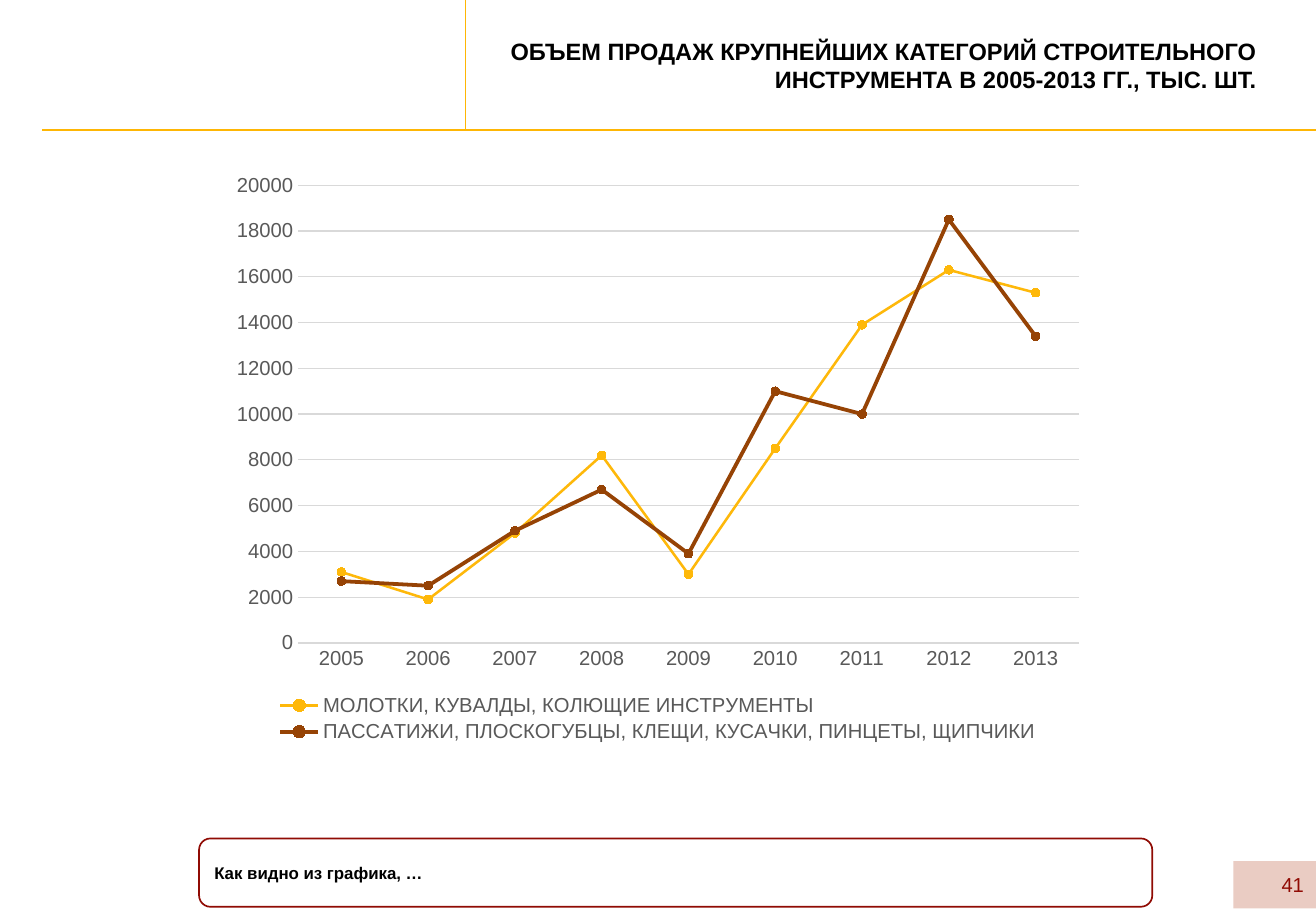
from pptx import Presentation
from pptx.chart.data import CategoryChartData as Data
from pptx.dml.color import RGBColor
from pptx.enum.chart import XL_CHART_TYPE as Kind, XL_LEGEND_POSITION as Place
from pptx.enum.chart import XL_MARKER_STYLE as Mark, XL_TICK_MARK as Tick
from pptx.enum.shapes import MSO_CONNECTOR as Conn, MSO_SHAPE as Form
from pptx.enum.text import MSO_ANCHOR as Anchor, PP_ALIGN as Align
from pptx.oxml.ns import qn
from pptx.util import Pt
from lxml.etree import SubElement

FONT = "Arial"
BLACK = RGBColor(0x00, 0x00, 0x00)
GOLD = RGBColor(0xFE, 0xB6, 0x04)
AMBER = RGBColor(0xFE, 0xB8, 0x0A)
BROWN = RGBColor(0x96, 0x43, 0x05)
RED = RGBColor(0x90, 0x0B, 0x04)
PINK = RGBColor(0xEA, 0xCC, 0xC3)
GREY = RGBColor(0x59, 0x59, 0x59)
PALE = RGBColor(0xD9, 0xD9, 0xD9)

WIDE, HIGH = 780, 540
YEARS = [str(year) for year in range(2005, 2014)]
# Name, values, colour, line width
SALES = [
    ("МОЛОТКИ, КУВАЛДЫ, КОЛЮЩИЕ ИНСТРУМЕНТЫ",
     [3100, 1900, 4800, 8200, 3000, 8500, 13900, 16300, 15300], AMBER, 1.5),
    ("ПАССАТИЖИ, ПЛОСКОГУБЦЫ, КЛЕЩИ, КУСАЧКИ, ПИНЦЕТЫ, ЩИПЧИКИ",
     [2700, 2500, 4900, 6700, 3900, 11000, 10000, 18500, 13400], BROWN, 2.25),
]


def style(font, size, color, bold=False):
    font.name, font.size, font.bold = FONT, Pt(size), bold
    font.color.rgb = color


def write(shape, text, size, color, align, bold=False):
    frame = shape.text_frame
    frame.word_wrap = True
    frame.vertical_anchor = Anchor.MIDDLE
    para = frame.paragraphs[0]
    para.alignment = align
    run = para.add_run()
    run.text = text
    style(run.font, size, color, bold)


def rule(slide, x1, y1, x2, y2, width):
    line = slide.shapes.add_connector(
        Conn.STRAIGHT, Pt(x1), Pt(y1), Pt(x2), Pt(y2))
    line.line.color.rgb = GOLD
    line.line.width = Pt(width)
    SubElement(line._element.spPr, qn("a:effectLst"))


# Title with its gold rules
def header(slide, x, y, w, h):
    split = x + 251
    rule(slide, x, y + h, x + w, y + h, 1)
    rule(slide, split, y + h, split, y, 0.75)
    box = slide.shapes.add_textbox(Pt(split), Pt(y), Pt(476), Pt(h))
    write(box, "ОБЪЕМ ПРОДАЖ КРУПНЕЙШИХ КАТЕГОРИЙ СТРОИТЕЛЬНОГО "
          "ИНСТРУМЕНТА В 2005-2013 ГГ., ТЫС. ШТ.", 14, BLACK, Align.RIGHT, True)


# Line chart of sales
def graph(slide, x, y, w, h):
    data = Data(number_format="0")
    data.categories = YEARS
    for name, vals, _, _ in SALES:
        data.add_series(name, vals)
    chart = slide.shapes.add_chart(
        Kind.LINE_MARKERS, Pt(x), Pt(y), Pt(w), Pt(h), data).chart
    style(chart.font, 10, BLACK)
    chart.has_title = False
    chart.plots[0].vary_by_categories = False

    for line, (_, _, color, width) in zip(chart.plots[0].series, SALES):
        line.smooth = False
        line.format.line.color.rgb = color
        line.format.line.width = Pt(width)
        line.marker.style, line.marker.size = Mark.CIRCLE, 5
        for part in (line.marker.format.fill, line.marker.format.line.fill):
            part.solid()
            part.fore_color.rgb = color

    cats, vals = chart.category_axis, chart.value_axis
    for axis in (cats, vals):
        axis.major_tick_mark = axis.minor_tick_mark = Tick.NONE
        style(axis.tick_labels.font, 12, GREY)
    vals.minimum_scale, vals.maximum_scale, vals.major_unit = 0, 20000, 2000
    vals.tick_labels.number_format = "0"
    vals.tick_labels.number_format_is_linked = False
    vals.has_major_gridlines = True
    vals.format.line.fill.background()
    for edge in (cats.format.line, vals.major_gridlines.format.line):
        edge.color.rgb = PALE
        edge.width = Pt(0.75)

    chart.has_legend = True
    chart.legend.position = Place.BOTTOM
    chart.legend.include_in_layout = False
    style(chart.legend.font, 12, GREY)


# Framed remark under the chart
def remark(slide, x, y, w, h):
    box = slide.shapes.add_shape(
        Form.ROUNDED_RECTANGLE, Pt(x), Pt(y), Pt(w), Pt(h))
    box.shadow.inherit = False
    box.fill.background()
    box.line.color.rgb = RED
    box.line.width = Pt(1)
    write(box, "Как видно из графика, …", 10, BLACK, Align.JUSTIFY, True)


# Page number on its tab
def number(slide, x, y, w, h):
    tab = slide.shapes.add_shape(Form.RECTANGLE, Pt(x), Pt(y), Pt(w), Pt(h))
    tab.shadow.inherit = False
    tab.fill.solid()
    tab.fill.fore_color.rgb = PINK
    tab.line.fill.background()
    write(tab, "41", 12, RED, Align.RIGHT)


def main():
    deck = Presentation()
    deck.slide_width, deck.slide_height = Pt(WIDE), Pt(HIGH)
    slide = deck.slides.add_slide(deck.slide_layouts[6])
    header(slide, 25, 0, WIDE - 25, 77)
    graph(slide, 130, 96.5, 520, 346.5)
    remark(slide, 118, 497, 565, 40.5)
    number(slide, WIDE - 49, 510.5, 49, 28)
    deck.save("out.pptx")


if __name__ == "__main__":
    main()
